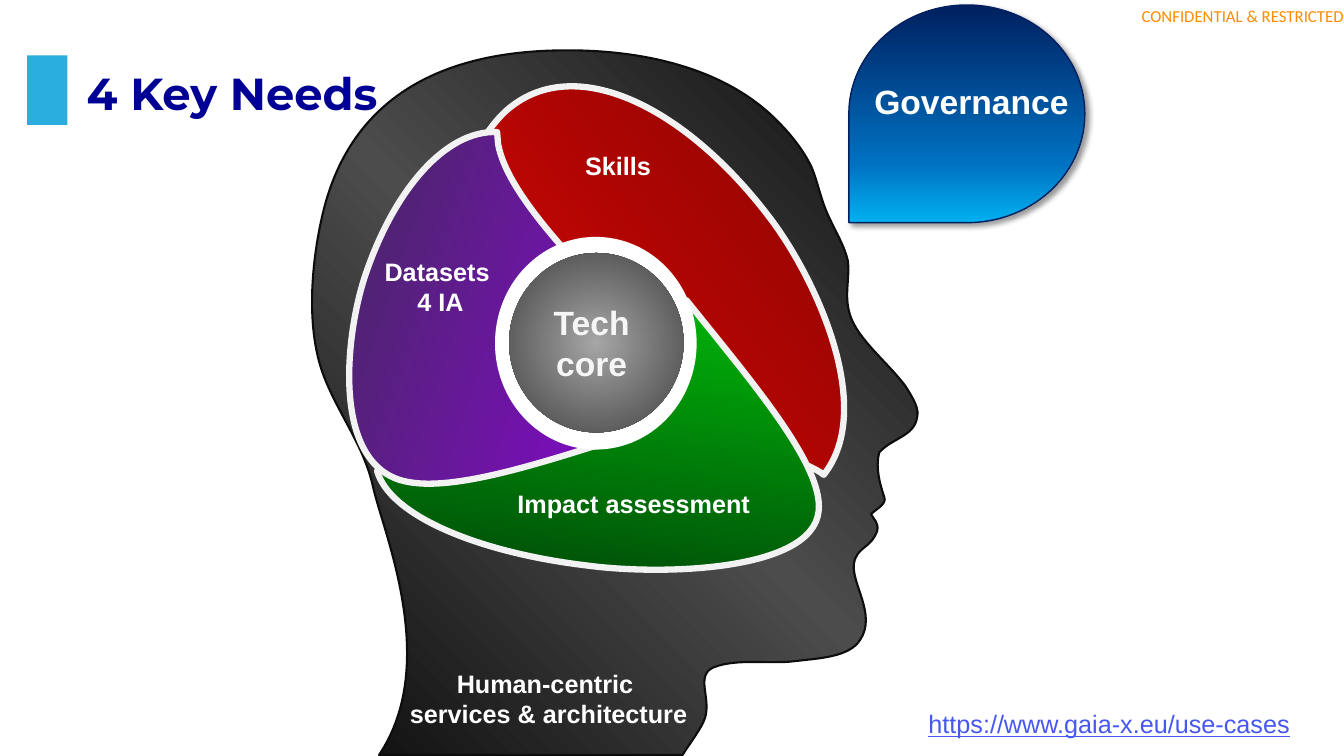
from math import cos, radians, sin

from lxml.etree import SubElement
from pptx import Presentation
from pptx.dml.color import RGBColor
from pptx.enum.shapes import MSO_SHAPE
from pptx.enum.text import MSO_ANCHOR, MSO_AUTO_SIZE, PP_ALIGN
from pptx.oxml import parse_xml
from pptx.oxml.ns import nsdecls, qn
from pptx.util import Inches, Pt

LEFT, CENTER, RIGHT = PP_ALIGN.LEFT, PP_ALIGN.CENTER, PP_ALIGN.RIGHT
TOP, MIDDLE = MSO_ANCHOR.TOP, MSO_ANCHOR.MIDDLE
GROW = MSO_AUTO_SIZE.SHAPE_TO_FIT_TEXT
OVAL, RECT, TEAR = MSO_SHAPE.OVAL, MSO_SHAPE.RECTANGLE, MSO_SHAPE.TEAR
WHITE = RGBColor(0xFF, 0xFF, 0xFF)
PALE = RGBColor(0xF6, 0xF6, 0xF6)
EDGE = RGBColor(0xF2, 0xF2, 0xF2)
BLACK = RGBColor(0x0D, 0x0D, 0x0D)
GRAY = RGBColor(0x4C, 0x4C, 0x4C)
SILVER = RGBColor(0xA6, 0xA6, 0xA6)
IRON = RGBColor(0x40, 0x40, 0x40)
NAVY = RGBColor(0x00, 0x20, 0x60)
BLUE = RGBColor(0x00, 0x70, 0xC0)
SKY = RGBColor(0x00, 0xB0, 0xF0)
ACCENT = RGBColor(0x2A, 0xAD, 0xDF)
INK = RGBColor(0x00, 0x00, 0x94)
LINK = RGBColor(0x47, 0x57, 0xF1)
ORANGE = RGBColor(0xFF, 0x8C, 0x00)
REDS = [(0, RGBColor(0x7E, 0x03, 0x00)), (79, RGBColor(0xE5, 0x08, 0x07)),
        (100, RGBColor(0xFF, 0x00, 0x00))]
GREENS = [(0, RGBColor(0x00, 0x43, 0x08)), (72, RGBColor(0x00, 0xA1, 0x09)),
          (100, RGBColor(0x00, 0xD0, 0x0A))]
PURPLES = [(0, RGBColor(0x3F, 0x2C, 0x56)), (100, RGBColor(0x96, 0x00, 0xEA))]

# Outlines: a start point, then lines (x, y) and curves (two controls, end).
HEAD = [
    (9.1, 4.11), (9.11, 4.03, 9.03, 3.91, 8.98, 3.83),
    (8.81, 3.6, 8.5, 3.36, 8.43, 3.12), (8.37, 2.93, 8.43, 2.77, 8.41, 2.59),
    (8.38, 2.45, 8.29, 2.3, 8.22, 2.15), (8.14, 1.98, 8.11, 1.8, 8.05, 1.66),
    (7.96, 1.47, 7.82, 1.31, 7.71, 1.2), (7.23, 0.71, 6.45, 0.49, 5.58, 0.5),
    (4.26, 0.51, 3.43, 1.06, 3.19, 2.17), (3.09, 2.62, 3.04, 3.22, 3.19, 3.67),
    (3.32, 4.06, 3.61, 4.41, 3.7, 4.83), (3.8, 5.28, 4.37, 6.58, 3.76, 7.49),
    (6.77, 7.49, 6.77, 7.49, 6.77, 7.49), (6.86, 7.35, 6.96, 7.22, 6.99, 7.13),
    (7.06, 6.93, 6.89, 6.7, 7.08, 6.62), (7.31, 6.53, 7.64, 6.59, 7.88, 6.56),
    (8.13, 6.53, 8.42, 6.52, 8.53, 6.35), (8.7, 6.1, 8.44, 5.79, 8.47, 5.59),
    (8.5, 5.42, 8.63, 5.45, 8.7, 5.27), (8.72, 5.18, 8.66, 5.15, 8.64, 5.1),
    (8.69, 5.05, 8.8, 5, 8.77, 4.93), (8.73, 4.81, 8.68, 4.64, 8.72, 4.49),
    (8.85, 4.34, 9.09, 4.33, 9.1, 4.11)]
SKILLS = [
    (4.35, 2.31), (4.58, 1.71, 4.82, 1.24, 5.08, 1.05),
    (5.75, 0.54, 6.81, 1.08, 7.62, 2.14), (8.07, 2.72, 8.7, 4.04, 8.17, 4.71),
    (8.12, 4.67, 8.06, 4.64, 7.99, 4.61), (7.3, 4.33, 5.83, 4.68, 4.46, 4.96),
    (4.35, 5.22), (3.64, 4.3), (3.88, 3.62, 4.11, 2.9, 4.35, 2.31)]
IMPACT = [
    (5.79, 2.85), (6.81, 2.98), (7.44, 3.77, 8.17, 4.61, 8.12, 5.07),
    (8.06, 5.67, 6.56, 5.71, 5.82, 5.61), (4.73, 5.48, 3.86, 5.11, 3.74, 4.67),
    (3.82, 4.67, 3.89, 4.66, 3.96, 4.64), (4.59, 4.48, 5.25, 3.71, 5.91, 3.02)]
DATA = [
    (6.74, 3.38), (6.45, 4.25), (5.49, 4.55, 4.46, 4.92, 3.96, 4.76),
    (3.29, 4.54, 3.43, 3.31, 3.62, 2.74), (3.9, 1.9, 4.41, 1.29, 4.93, 1.31),
    (4.94, 1.43), (5.04, 1.97, 5.82, 2.72, 6.51, 3.44)]


def grade(shape, stops, angle=None):
    """Fill with a gradient: linear at an angle, or circular without one."""
    marks = "".join(f'<a:gs pos="{pos * 1000}"><a:srgbClr val="{color}"/></a:gs>'
                    for pos, color in stops)
    if angle is None:
        way = ('<a:path path="circle"><a:fillToRect l="50000" t="50000" '
               'r="50000" b="50000"/></a:path>')
    else:
        way = f'<a:lin ang="{angle * 60000}" scaled="0"/>'
    shape.fill.solid()
    props = shape._element.spPr
    props.replace(props.find(qn("a:solidFill")), parse_xml(
        f'<a:gradFill {nsdecls("a")} rotWithShape="1">'
        f'<a:gsLst>{marks}</a:gsLst>{way}</a:gradFill>'))


def shade(angle):
    return parse_xml(
        f'<a:effectLst {nsdecls("a")}><a:outerShdw blurRad="50800" dist="38100" '
        f'dir="{angle * 60000}" algn="tl" rotWithShape="0"><a:srgbClr val="000000">'
        '<a:alpha val="40000"/></a:srgbClr></a:outerShdw></a:effectLst>')


def edge(shape, color=None, width=1):
    shape.shadow.inherit = False
    if color is None:
        shape.line.fill.background()
    else:
        shape.line.color.rgb = color
        shape.line.width = Pt(width)


def write(shape, text, size=18, color=WHITE, font="Arial", bold=True, line=None,
          align=CENTER, anchor=TOP, wrap=False, pad=(0.1, 0.05), glow=False):
    frame = shape.text_frame
    frame.text = text
    frame.word_wrap = wrap
    frame.vertical_anchor = anchor
    frame.margin_left = frame.margin_right = Inches(pad[0])
    frame.margin_top = frame.margin_bottom = Inches(pad[1])
    for para in frame.paragraphs:
        para.alignment = align
        for run in para.runs:
            face = run.font
            face.name, face.size, face.bold = font, Pt(size), bold
            face.color.rgb, face.underline = color, line
            if glow:
                run._r.rPr.find(qn("a:solidFill")).addnext(shade(90))


def label(slide, box, text, **form):
    item = slide.shapes.add_textbox(*map(Inches, box))
    write(item, text, **form)
    item.text_frame.auto_size = GROW


def blob(slide, box, outline, stops, angle, color, width, turn=0):
    """Draw a curved outline, turned about the middle of its box."""
    x, y, w, h = box
    mid, half = x + w / 2, y + h / 2
    c, s = cos(radians(turn)), sin(radians(turn))

    def spots(part):
        return [(Inches(w / 2 + (px - mid) * c + (py - half) * s),
                 Inches(h / 2 - (px - mid) * s + (py - half) * c))
                for px, py in zip(part[::2], part[1::2])]

    parts = [spots(part) for part in outline]
    pen = slide.shapes.build_freeform(*parts[0][0])
    pen.add_line_segments([part[-1] for part in parts[1:]], close=True)
    shape = pen.convert_to_shape()
    shape.left, shape.top, shape.width, shape.height = map(Inches, box)
    shape.rotation = turn
    route = next(shape._element.iter(qn("a:path")))
    route.set("w", str(shape.width))
    route.set("h", str(shape.height))
    for step in list(route):
        route.remove(step)
    for index, part in enumerate(parts):
        kind = "cubicBezTo" if len(part) == 3 else "lnTo" if index else "moveTo"
        step = SubElement(route, qn(f"a:{kind}"))
        for px, py in part:
            SubElement(step, qn("a:pt"), x=str(px), y=str(py))
    SubElement(route, qn("a:close"))
    grade(shape, stops, angle)
    edge(shape, color, width)


def brain(slide):
    blob(slide, (3.04, 0.49, 6.07, 7), HEAD,
         [(0, BLACK), (50, GRAY), (100, BLACK)], 315, BLACK, 1.5)
    for box, outline, stops, turn in (
            ((3.44, 1.25, 4.79, 4.48), SKILLS, REDS, 232.5),
            ((3.81, 2.89, 4.4, 2.74), IMPACT, GREENS, 7.1),
            ((3.33, 1.68, 3.58, 3.16), DATA, PURPLES, 108.5)):
        blob(slide, box, outline, stops, 270, EDGE, 4.5, turn)
    ring = slide.shapes.add_shape(OVAL, *map(Inches, (4.91, 2.35, 2, 2.11)))
    ring.fill.solid()
    ring.fill.fore_color.rgb = WHITE
    edge(ring)
    core = slide.shapes.add_shape(OVAL, *map(Inches, (5.05, 2.51, 1.73, 1.78)))
    grade(core, [(0, SILVER), (100, IRON)])
    edge(core)
    write(core, "Tech \vcore ", size=24, color=PALE, anchor=MIDDLE, wrap=True,
          pad=(0, 0))
    label(slide, (5.7, 1.44, 0.86, 0.4), "Skills", glow=True)
    label(slide, (5.02, 4.8, 2.53, 0.4), "Impact assessment", glow=True)
    label(slide, (3.71, 2.49, 1.32, 0.71), "Datasets \v4 IA", glow=True)
    label(slide, (3.95, 6.58, 2.98, 0.71), "Human-centric \nservices & architecture")


def drop(slide, box):
    x, y, w, h = box
    shape = slide.shapes.add_shape(TEAR, *map(Inches, box))
    props = shape._element.spPr
    form = props.find(qn("a:xfrm"))
    form.set("flipH", "1")
    form.set("flipV", "1")
    grade(shape, [(0, NAVY), (72, BLUE), (100, SKY)], 270)
    edge(shape, NAVY)
    props.replace(props.find(qn("a:effectLst")), shade(45))
    label(slide, (x + 0.14, y + 0.7, 2.15, 0.5), "Governance", glow=True, size=24)


def heading(slide, box):
    x, y, w, h = box
    title = slide.shapes.title
    title.left, title.top, title.width, title.height = map(Inches, box)
    write(title, "4 Key Needs", size=32, color=INK, font="Montserrat",
          align=LEFT, anchor=MIDDLE, wrap=True, pad=(0.1, 0.1))
    slide.shapes._spTree.append(title._element)
    bar = slide.shapes.add_shape(
        RECT, *map(Inches, (x - 0.49, y + 0.17, 0.4, 0.69)))
    bar.fill.solid()
    bar.fill.fore_color.rgb = ACCENT
    edge(bar)


def main():
    deck = Presentation()
    deck.slide_width, deck.slide_height = Inches(13.33), Inches(7.5)
    slide = deck.slides.add_slide(deck.slide_layouts[5])
    label(slide, (10.94, 0, 2.39, 0.32), "CONFIDENTIAL & RESTRICTED", size=12,
          color=ORANGE, font="Calibri", bold=False, align=RIGHT, anchor=MIDDLE,
          pad=(0, 0))
    brain(slide)
    drop(slide, (8.42, 0.05, 2.34, 2.16))
    heading(slide, (0.76, 0.38, 12.04, 1.07))
    label(slide, (9.11, 6.98, 4.25, 0.4), "https://www.gaia-x.eu/use-cases",
          color=LINK, bold=False, line=True, align=LEFT, wrap=True)
    deck.save("out.pptx")


if __name__ == "__main__":
    main()
